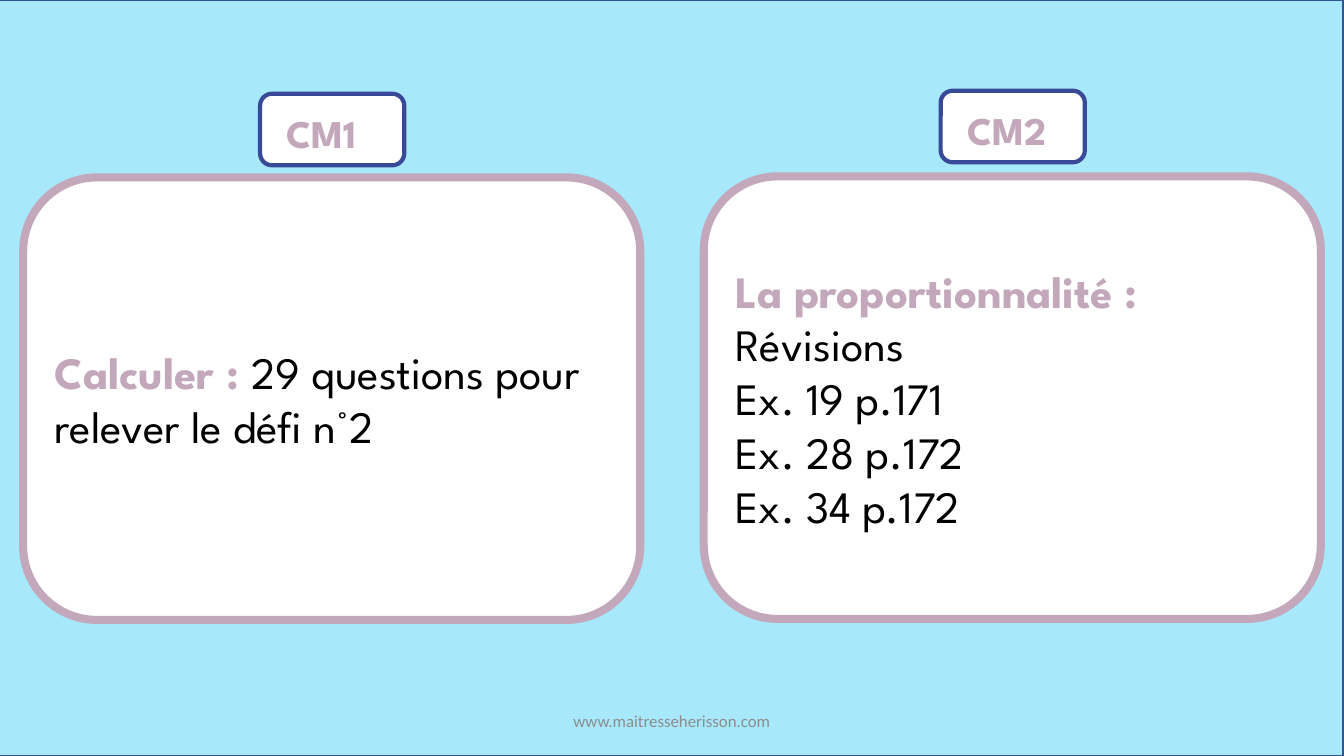
from pptx import Presentation
from pptx.dml.color import RGBColor
from pptx.enum.shapes import MSO_SHAPE
from pptx.enum.text import MSO_ANCHOR, PP_ALIGN
from pptx.util import Inches, Pt

SKY = RGBColor(0xA7, 0xE8, 0xFB)
EDGE = RGBColor(0x32, 0x54, 0x91)
NAVY = RGBColor(0x37, 0x49, 0x97)
MAUVE = RGBColor(0xC3, 0xA7, 0xBA)
GREY = RGBColor(0x8C, 0x8C, 0x8C)
WHITE = RGBColor(0xFF, 0xFF, 0xFF)
BLACK = RGBColor(0, 0, 0)
TITLE_FONT = "League Spartan"

# Each paragraph is a list of (text, is_heading) runs.
CLASSES = [
    {"name": "CM1", "left": 0.23, "top": 1.76, "badge_top": 0.93, "work": [
        [("Calculer : ", True), ("29 questions pour relever le défi n°2", False)],
    ]},
    {"name": "CM2", "left": 6.98, "top": 1.75, "badge_top": 0.9, "work": [
        [("La proportionnalité :", True)],
        [("Révisions", False)],
        [("Ex. 19 p.171", False)],
        [("Ex. 28 p.172", False)],
        [("Ex. 34 p.172", False)],
    ]},
]
FOOTER = "www.maitresseherisson.com"

WIDTH, HEIGHT = 13.33, 7.5
PANEL_WIDTH, PANEL_HEIGHT = 6.12, 4.39
BADGE_WIDTH, BADGE_HEIGHT = 1.43, 0.71
BADGE_OFFSET = 2.35
LABEL_WIDTH, LABEL_HEIGHT = 1.1, 0.57
FOOTER_WIDTH, FOOTER_HEIGHT = 4.5, 0.4


def add_box(shapes, kind, box, fill, line, line_width):
    shape = shapes.add_shape(kind, *map(Inches, box))
    shape.shadow.inherit = False
    shape.fill.solid()
    shape.fill.fore_color.rgb = fill
    shape.line.color.rgb = line
    shape.line.width = Pt(line_width)
    return shape


def add_run(paragraph, text, font, size, color, bold=False):
    run = paragraph.add_run()
    run.text = text
    run.font.name = font
    run.font.size = Pt(size)
    run.font.bold = bold
    run.font.color.rgb = color


def add_badge(slide, name, left, top):
    group = slide.shapes.add_group_shape()
    add_box(group.shapes, MSO_SHAPE.ROUNDED_RECTANGLE,
            (left, top, BADGE_WIDTH, BADGE_HEIGHT), WHITE, NAVY, 3)
    label_left = left + (BADGE_WIDTH - LABEL_WIDTH) / 2
    label = group.shapes.add_textbox(
        *map(Inches, (label_left, top + 0.11, LABEL_WIDTH, LABEL_HEIGHT)))
    label.text_frame.word_wrap = True
    add_run(label.text_frame.paragraphs[0], name, TITLE_FONT, 28, MAUVE, True)


def add_panel(slide, left, top, work):
    panel = add_box(slide.shapes, MSO_SHAPE.ROUNDED_RECTANGLE,
                    (left, top, PANEL_WIDTH, PANEL_HEIGHT), WHITE, MAUVE, 5.75)
    frame = panel.text_frame
    frame.word_wrap = True
    frame.vertical_anchor = MSO_ANCHOR.MIDDLE
    for index, runs in enumerate(work):
        paragraph = frame.add_paragraph() if index else frame.paragraphs[0]
        paragraph.alignment = PP_ALIGN.LEFT
        for text, is_heading in runs:
            add_run(paragraph, text, TITLE_FONT, 32,
                    MAUVE if is_heading else BLACK, is_heading)


def add_footer(slide):
    footer = slide.shapes.add_textbox(
        Inches((WIDTH - FOOTER_WIDTH) / 2), Inches(6.95),
        Inches(FOOTER_WIDTH), Inches(FOOTER_HEIGHT))
    frame = footer.text_frame
    frame.word_wrap = True
    frame.vertical_anchor = MSO_ANCHOR.MIDDLE
    frame.paragraphs[0].alignment = PP_ALIGN.CENTER
    add_run(frame.paragraphs[0], FOOTER, "Calibri", 12, GREY)


def main():
    presentation = Presentation()
    presentation.slide_width = Inches(WIDTH)
    presentation.slide_height = Inches(HEIGHT)
    slide = presentation.slides.add_slide(presentation.slide_layouts[6])
    add_box(slide.shapes, MSO_SHAPE.RECTANGLE, (-0.01, 0, WIDTH, HEIGHT), SKY, EDGE, 1)
    for group in CLASSES:
        add_badge(slide, group["name"], group["left"] + BADGE_OFFSET, group["badge_top"])
        add_panel(slide, group["left"], group["top"], group["work"])
    add_footer(slide)
    presentation.save("out.pptx")


if __name__ == "__main__":
    main()
